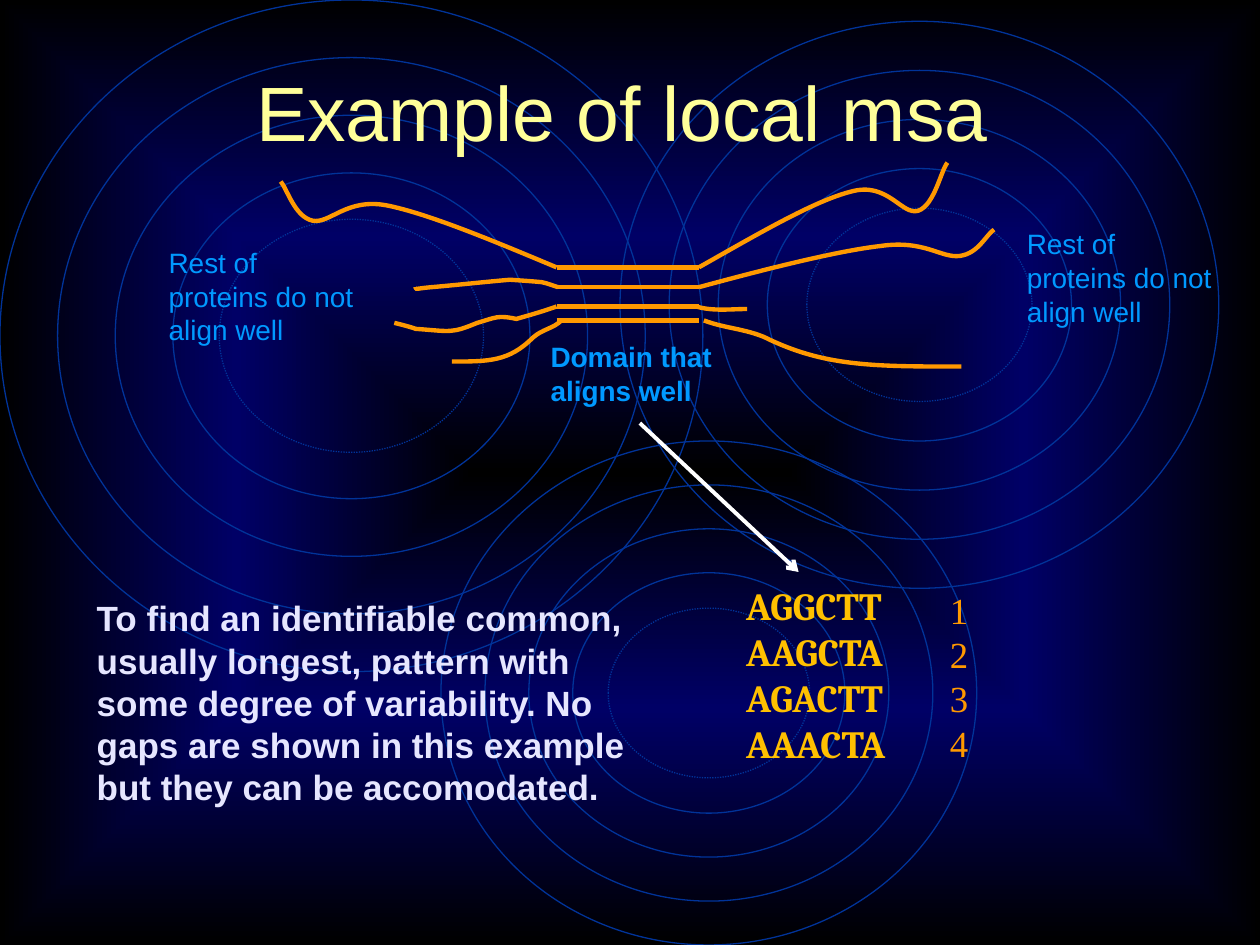
from pptx import Presentation
from pptx.dml.color import RGBColor
from pptx.enum.dml import MSO_LINE
from pptx.enum.shapes import MSO_CONNECTOR, MSO_SHAPE
from pptx.enum.text import MSO_ANCHOR, PP_ALIGN
from pptx.oxml import parse_xml
from pptx.oxml.ns import nsdecls, qn
from pptx.util import Cm, Pt
from lxml.etree import SubElement

BLUE, GOLD, ORANGE = "0099FF", "FFC000", "FF9900"
LEFT, RIGHT = 5.56, 8.43
ROWS = [2.11, 2.51, 2.9, 3.18]
CURVES = [
    [(RIGHT, 2.11), (9.6, 1.45), (10.77, 0.76), (11.51, 0.58),
     (12.24, 0.38), (12.52, 1.07), (12.85, 0.97),
     (13.18, 0.86), (13.31, 0.15), (13.44, 0)],
    [(RIGHT, 2.51), (9.83, 2.13), (11.23, 1.78), (12.09, 1.68),
     (12.98, 1.55), (13.31, 1.93), (13.69, 1.88),
     (14.07, 1.83), (14.22, 1.45), (14.38, 1.35)],
    [(LEFT, 2.11), (4.27, 1.57), (2.95, 1.02), (2.13, 0.86),
     (1.32, 0.71), (0.99, 1.24), (0.64, 1.17),
     (0.28, 1.09), (0.13, 0.53), (0, 0.38)],
    [(5.66, 3.18), (5.49, 3.35), (5.28, 3.35), (5.08, 3.53),
     (4.6, 4.01), (4.19, 4.01), (3.45, 4.01)],
    [(8.53, 3.18), (8.97, 3.35), (9.45, 3.35), (9.88, 3.58),
     (11.02, 4.11), (12.01, 4.11), (13.72, 4.11)],
    [(LEFT, 2.9), (5.28, 3), (5.03, 3.07), (4.75, 3.15),
     (4.37, 3.07), (4.34, 3.12), (3.96, 3.23),
     (3.43, 3.45), (3.43, 3.4), (2.72, 3.35),
     (2.59, 3.3), (2.29, 3.23), (2.29, 3.23)],
    [(5.59, 2.51), (5.51, 2.49), (5.41, 2.44), (5.26, 2.41),
     (5.08, 2.39), (4.62, 2.36), (4.62, 2.36),
     (4.06, 2.41), (3.61, 2.46), (3.05, 2.51),
     (2.69, 2.54), (2.72, 2.57), (2.72, 2.51)],
    [(8.38, 2.9), (8.71, 3), (9.09, 2.95), (9.4, 2.95)],
]


def tint(code):
    return RGBColor.from_string(code)


def ink(line, color, width):
    line.color.rgb = tint(color)
    line.width = Pt(width)


def paint_back(slide):
    stops = "".join(
        f'<a:gs pos="{pos}"><a:srgbClr val="{code}"/></a:gs>'
        for pos, code in [(0, "000000"), (50000, "000066"), (100000, "000000")])
    back = parse_xml(
        f'<p:bg {nsdecls("p", "a")}><p:bgPr><a:gradFill rotWithShape="0">'
        f'<a:gsLst>{stops}</a:gsLst><a:path path="shape">'
        '<a:fillToRect l="50000" t="50000" r="50000" b="50000"/></a:path>'
        '</a:gradFill><a:effectLst/></p:bgPr></p:bg>')
    slide.element.cSld.insert(0, back)


def add_rings(slide, x, y, w, h):
    group = slide.shapes.add_group_shape()
    for part in (0, 0.082, 0.164, 0.246, 0.312):
        gap = w * part
        ring = group.shapes.add_shape(
            MSO_SHAPE.OVAL, Cm(x + gap), Cm(y + gap),
            Cm(w - 2 * gap), Cm(h - 2 * gap))
        ring.shadow.inherit = False
        ring.fill.background()
        ink(ring.line, "003399", 0.75)
    ring.line.dash_style = MSO_LINE.ROUND_DOT


def write(par, text, font, size, color, bold=False):
    run = par.add_run()
    run.text = text
    run.font.name = font
    run.font.size = Pt(size)
    run.font.bold = bold
    run.font.color.rgb = tint(color)


def add_title(slide, x, y, w, h):
    title = slide.shapes.title
    title.left, title.top, title.width, title.height = map(Cm, (x, y, w, h))
    frame = title.text_frame
    frame.margin_left = frame.margin_right = 0
    frame.margin_top = frame.margin_bottom = 0
    frame.vertical_anchor = MSO_ANCHOR.MIDDLE
    par = frame.paragraphs[0]
    par.alignment = PP_ALIGN.CENTER
    write(par, "Example of local msa", "Arial", 44, "FFFF99")
    slide.shapes._spTree.append(title.element)


def add_text(slide, x, y, w, h, lines, font, size, color,
             bold=False, wrap=True, inset=True):
    frame = slide.shapes.add_textbox(*map(Cm, (x, y, w, h))).text_frame
    frame.word_wrap = wrap
    if not inset:
        frame.margin_left = frame.margin_right = 0
        frame.margin_top = frame.margin_bottom = 0
    for i, text in enumerate(lines):
        par = frame.add_paragraph() if i else frame.paragraphs[0]
        par.line_spacing = Pt(size * 1.2)
        write(par, text, font, size, color, bold)


def add_line(slide, x1, y1, x2, y2, color, width):
    line = slide.shapes.add_connector(
        MSO_CONNECTOR.STRAIGHT, *map(Cm, (x1, y1, x2, y2)))
    ink(line.line, color, width)
    SubElement(line.element.spPr, qn("a:effectLst"))
    return line


def add_curve(slide, x, y, points):
    spots = [(Cm(x + px), Cm(y + py)) for px, py in points]
    pen = slide.shapes.build_freeform(*spots[0])
    pen.add_line_segments(spots[1:], close=False)
    curve = pen.convert_to_shape()
    curve.shadow.inherit = False
    curve.fill.background()
    ink(curve.line, ORANGE, 2.5)
    steps = list(curve.element.iter(qn("a:lnTo")))
    for i in range(0, len(steps), 3):
        trio = steps[i:i + 3]
        bend = SubElement(trio[0].getparent(), qn("a:cubicBezTo"))
        for step in trio:
            bend.append(step[0])
            step.getparent().remove(step)


def add_strands(slide, x, y):
    for row in ROWS:
        add_line(slide, x + LEFT, y + row, x + RIGHT, y + row, ORANGE, 2.5)
    for points in CURVES:
        add_curve(slide, x, y, points)
    rest = ["Rest of proteins do not align well"]
    add_text(slide, x + 5.19, y + 3.45, 4.27, 1.57,
             ["Domain that aligns well"], "Arial", 16, BLUE, bold=True)
    add_text(slide, x + 14.79, y + 1.17, 4.27, 2.26, rest, "Arial", 16, BLUE)
    add_text(slide, x - 2.51, y + 1.55, 4.27, 2.26, rest, "Arial", 16, BLUE)


def add_match(slide, x, y):
    arrow = add_line(slide, x - 2.14, y - 3.2, x + 1.06, y - 0.2, "FFFFFF", 2.25)
    SubElement(arrow.line._get_or_add_ln(), qn("a:tailEnd"), type="arrow")
    add_text(slide, x, y, 3.4, 3.76, ["AGGCTT", "AAGCTA", "AGACTT", "AAACTA"],
             "Cambria", 22, GOLD, bold=True, wrap=False, inset=False)
    add_text(slide, x + 3.86, y, 0.84, 3.84, ["1", "2", "3", "4"],
             "Times New Roman", 21, ORANGE, wrap=False)


def main():
    deck = Presentation()
    deck.slide_width, deck.slide_height = Cm(25.4), Cm(19.05)
    slide = deck.slides.add_slide(deck.slide_layouts[5])
    paint_back(slide)
    add_rings(slide, 0, 0, 14.17, 13.54)
    add_rings(slide, 8.89, 8.89, 10.8, 10.16)
    add_rings(slide, 12.5, 0.43, 12.07, 11.43)
    add_title(slide, 1.7, 0.64, 21.69, 3.18)
    add_match(slide, 15.04, 11.73)
    add_strands(slide, 5.66, 3.28)
    add_text(slide, 1.7, 11.91, 11.61, 4.52,
             ["To find an identifiable common, usually longest, pattern with "
              "some degree of variability. No gaps are shown in this example "
              "but they can be accomodated."],
             "Arial", 20, "E6E6FF", bold=True)
    deck.save("out.pptx")


if __name__ == "__main__":
    main()
